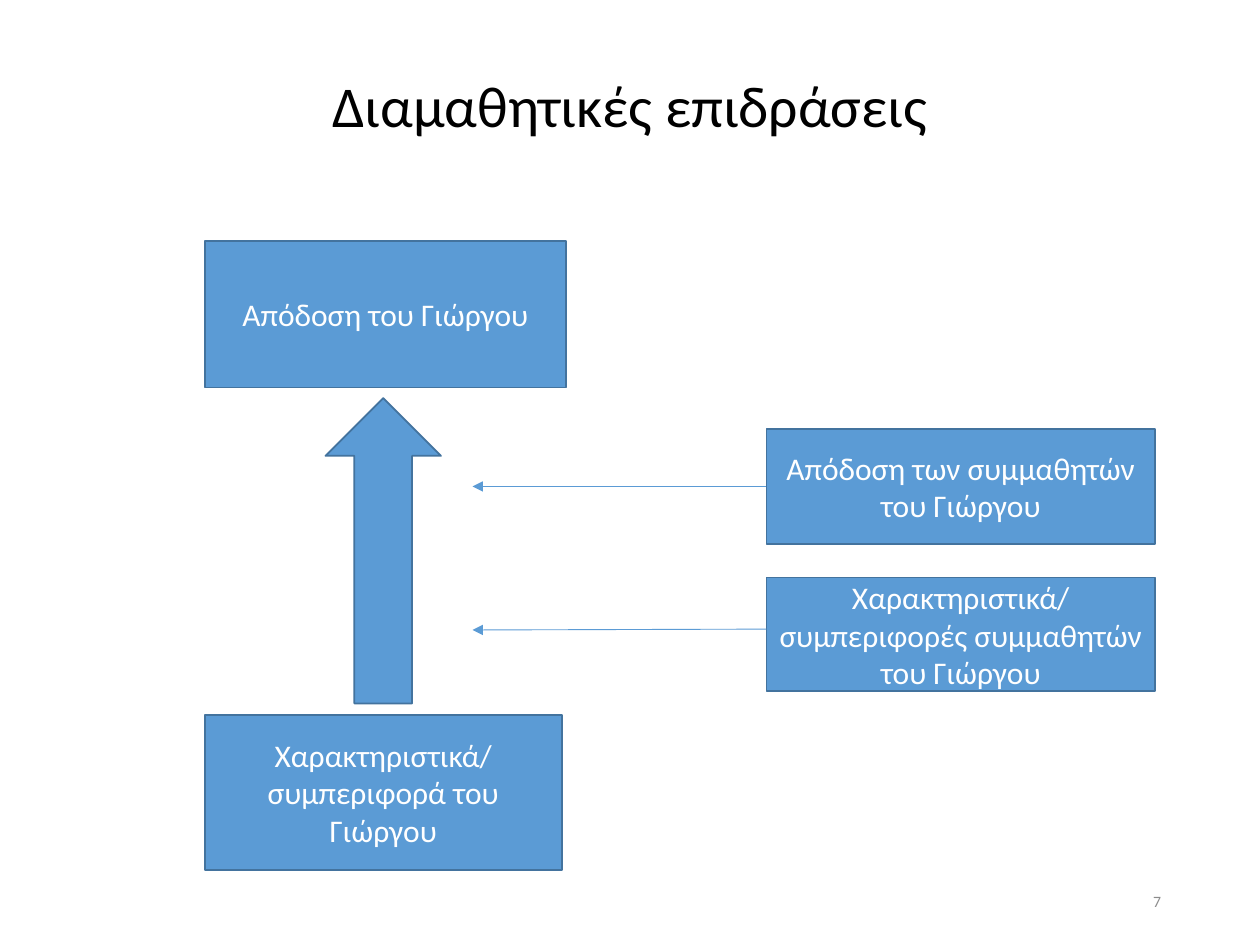
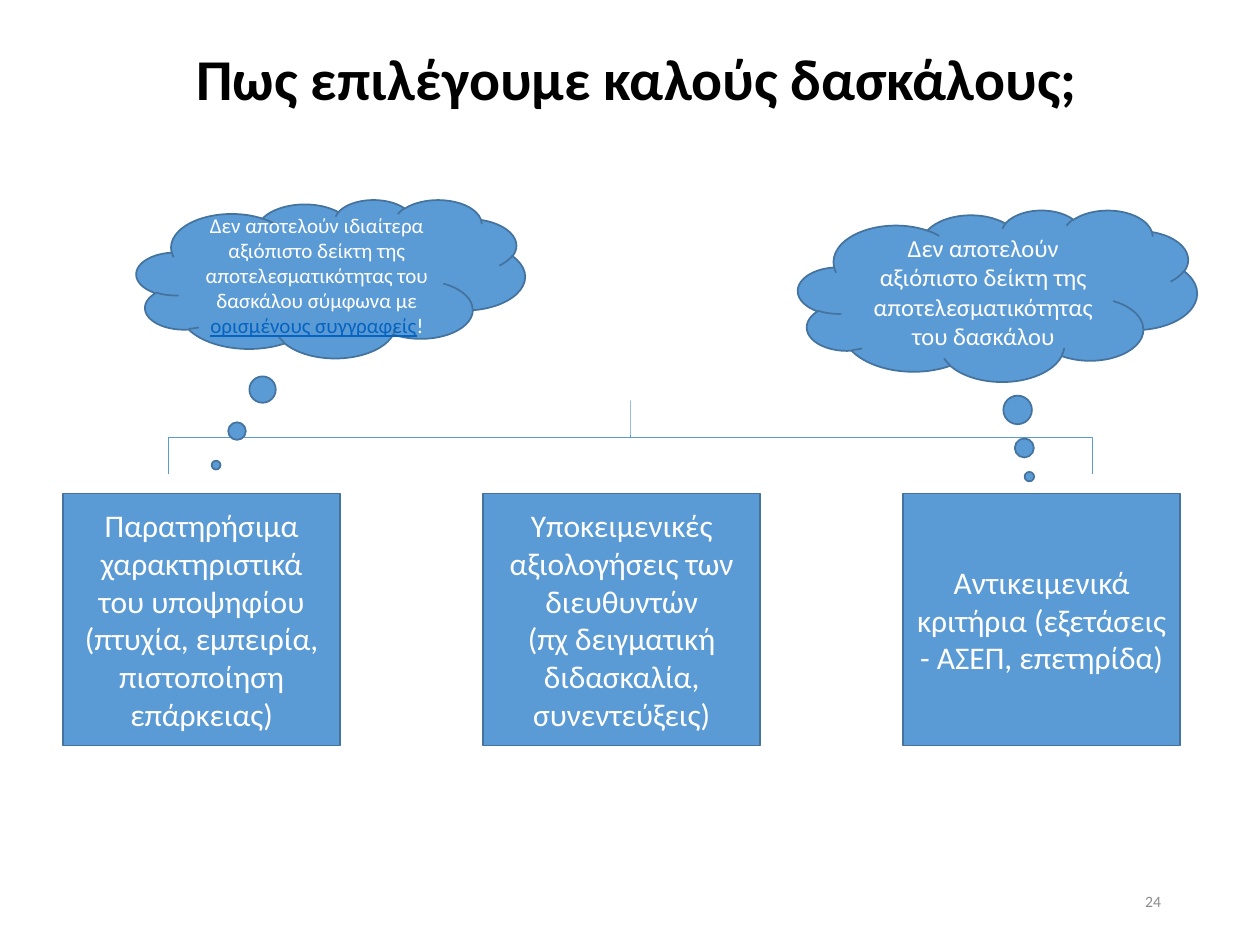
from dataclasses import dataclass

from lxml import etree
from pptx import Presentation
from pptx.dml.color import RGBColor
from pptx.enum.shapes import MSO_CONNECTOR, MSO_SHAPE
from pptx.enum.text import MSO_ANCHOR, PP_ALIGN
from pptx.oxml.ns import qn
from pptx.util import Pt

RECTANGLE = MSO_SHAPE.RECTANGLE
UP_ARROW = MSO_SHAPE.UP_ARROW
LEFT_BRACE = MSO_SHAPE.LEFT_BRACE
CLOUD = MSO_SHAPE.CLOUD_CALLOUT
STRAIGHT = MSO_CONNECTOR.STRAIGHT
MIDDLE = MSO_ANCHOR.MIDDLE
CENTER, RIGHT = PP_ALIGN.CENTER, PP_ALIGN.RIGHT
LEFT_SIDE = 1


@dataclass(frozen=True)
class Theme:
    font: str = "Calibri"
    background: RGBColor = RGBColor(0xFF, 0xFF, 0xFF)
    title: RGBColor = RGBColor(0, 0, 0)
    page_number: RGBColor = RGBColor(0x8C, 0x8C, 0x8C)
    accent: RGBColor = RGBColor(0x5B, 0x9B, 0xD5)
    outline: RGBColor = RGBColor(0x43, 0x73, 0x9E)
    box_text: RGBColor = RGBColor(0xFF, 0xFF, 0xFF)
    link: RGBColor = RGBColor(0x05, 0x63, 0xC1)
    title_size: int = 33
    box_size: int = 18
    number_size: int = 9
    line: float = 1
    thin_line: float = 0.5


THEME = Theme()


def points(*lengths):
    return [Pt(length) for length in lengths]


def write(shape, paragraphs, size, color, align=CENTER, bold=False, spacing=None):
    """Fill a shape with paragraphs of one style, centred vertically."""
    frame = shape.text_frame
    frame.word_wrap = True
    frame.vertical_anchor = MIDDLE
    for index, text in enumerate(paragraphs):
        paragraph = frame.paragraphs[0] if index == 0 else frame.add_paragraph()
        paragraph.add_run().text = text
        paragraph.alignment = align
        paragraph.line_spacing = spacing
        font = paragraph.font
        font.name, font.size, font.bold = THEME.font, Pt(size), bold
        font.color.rgb = color


def add_page(deck, title, title_area, number, bold=False):
    """Start a slide with its title and page number."""
    slide = deck.slides.add_slide(deck.slide_layouts[6])
    slide.background.fill.solid()
    slide.background.fill.fore_color.rgb = THEME.background
    heading = slide.shapes.add_textbox(*points(*title_area))
    write(heading, [title], THEME.title_size, THEME.title, bold=bold, spacing=0.9)
    footer = slide.shapes.add_textbox(*points(508.5, 500.5, 162, 28.75))
    write(footer, [str(number)], THEME.number_size, THEME.page_number, RIGHT)
    return slide


def add_filled(slide, kind, area, paragraphs=(), size=THEME.box_size):
    """Add an accent-coloured shape with optional white text."""
    shape = slide.shapes.add_shape(kind, *points(*area))
    shape.shadow.inherit = False
    shape.fill.solid()
    shape.fill.fore_color.rgb = THEME.accent
    shape.line.color.rgb = THEME.outline
    shape.line.width = Pt(THEME.line)
    write(shape, paragraphs, size, THEME.box_text)
    return shape


def add_thought(slide, area, tip, text, size):
    """Add a thought cloud whose bubbles lead to tip."""
    cloud = add_filled(slide, CLOUD, area, [text], size)
    cloud.adjustments[0], cloud.adjustments[1] = tip
    return cloud


def add_arrow(slide, start, end, width):
    arrow = slide.shapes.add_connector(STRAIGHT, *points(*start, *end))
    arrow.line.color.rgb = THEME.accent
    arrow.line.width = Pt(width)
    line = arrow.line._get_or_add_ln()
    etree.SubElement(line, qn("a:tailEnd"), type="triangle")
    etree.SubElement(arrow._element.spPr, qn("a:effectLst"))
    return arrow


def add_bracket(slide, center_x, center_y, span, depth):
    """Add a square bracket, a turned brace, that opens downwards."""
    bracket = slide.shapes.add_shape(LEFT_BRACE, *points(
        center_x - depth / 2, center_y - span / 2, depth, span))
    bracket.rotation = 90
    bracket.adjustments[0], bracket.adjustments[1] = 0, 0.5
    bracket.shadow.inherit = False
    bracket.fill.background()
    bracket.line.color.rgb = THEME.accent
    bracket.line.width = Pt(THEME.thin_line)


def build_peer_effects(deck):
    slide = add_page(deck, "Διαμαθητικές επιδράσεις", (49.5, 28.75, 621, 67), 7)

    # George's characteristics lead to his performance
    add_filled(slide, RECTANGLE, (117, 137.5, 206.5, 84), ["Απόδοση του Γιώργου"])
    add_filled(slide, RECTANGLE, (117, 408.5, 204, 88.5),
               ["Χαρακτηριστικά/συμπεριφορά του Γιώργου"])

    # Influence of the classmates
    peer_left, arrow_end = 438, 270
    peer_performance = add_filled(slide, RECTANGLE, (peer_left, 245, 222, 66),
                                  ["Απόδοση των συμμαθητών του Γιώργου"])
    add_filled(slide, RECTANGLE, (peer_left, 330, 222, 65),
               ["Χαρακτηριστικά/συμπεριφορές συμμαθητών του Γιώργου"])
    add_filled(slide, UP_ARROW, (186, 227.5, 66, 174.5))
    performance_arrow = add_arrow(slide, (peer_left, 278), (arrow_end, 278), THEME.line)
    performance_arrow.begin_connect(peer_performance, LEFT_SIDE)
    add_arrow(slide, (peer_left, 359.5), (arrow_end, 360), THEME.thin_line)


def build_teacher_selection(deck):
    slide = add_page(deck, "Πως επιλέγουμε καλούς δασκάλους;",
                     (53.5, 18.75, 621, 55.5), 24, bold=True)
    add_bracket(slide, 360, 250, span=528, depth=42)

    # Three ways of selecting
    criteria = [
        ["Παρατηρήσιμα χαρακτηριστικά του υποψηφίου",
         "(πτυχία, εμπειρία, πιστοποίηση επάρκειας)"],
        ["Υποκειμενικές αξιολογήσεις των διευθυντών",
         "(πχ δειγματική διδασκαλία, συνεντεύξεις)"],
        ["Αντικειμενικά κριτήρια (εξετάσεις - ΑΣΕΠ, επετηρίδα)"],
    ]
    for column, paragraphs in enumerate(criteria):
        add_filled(slide, RECTANGLE, (36 + 240 * column, 282, 158.5, 144), paragraphs)

    # Doubts about the outer two
    doubt = add_thought(
        slide, (78, 114, 222, 90.5), (-0.295, 1.177),
        "Δεν αποτελούν ιδιαίτερα αξιόπιστο δείκτη της αποτελεσματικότητας "
        "του δασκάλου σύμφωνα με ", 12)
    sentence = doubt.text_frame.paragraphs[0]
    authors = sentence.add_run()
    authors.text = "ορισμένους συγγραφείς"
    authors.font.color.rgb = THEME.link
    authors.font.underline = True
    sentence.add_run().text = "!"
    add_thought(slide, (456, 120, 228, 98), (0.08, 1.055),
                "Δεν αποτελούν αξιόπιστο δείκτη της αποτελεσματικότητας "
                "του δασκάλου", 14)


def main():
    deck = Presentation()
    deck.slide_width, deck.slide_height = points(720, 540)
    build_peer_effects(deck)
    build_teacher_selection(deck)
    deck.save("out.pptx")


if __name__ == "__main__":
    main()
